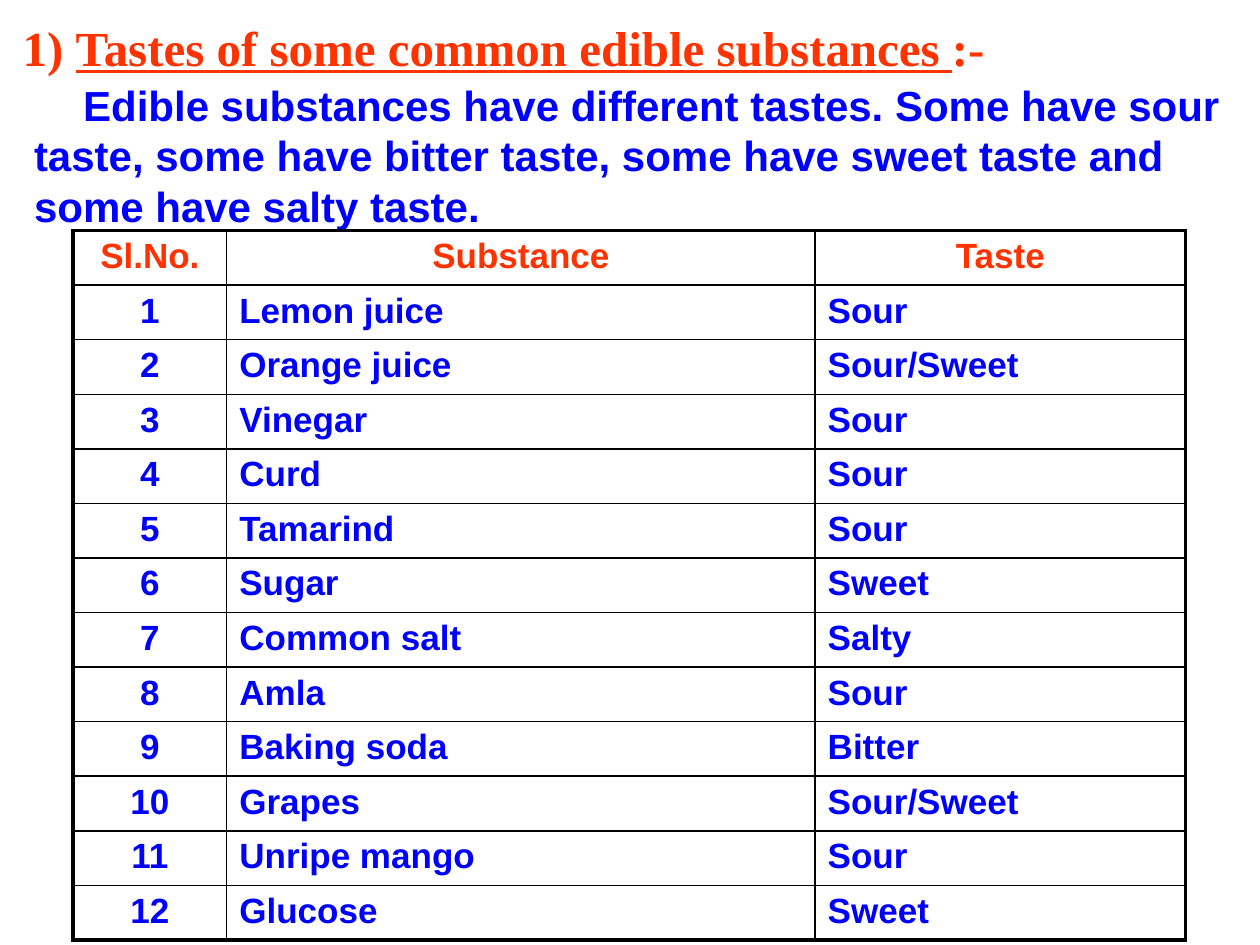
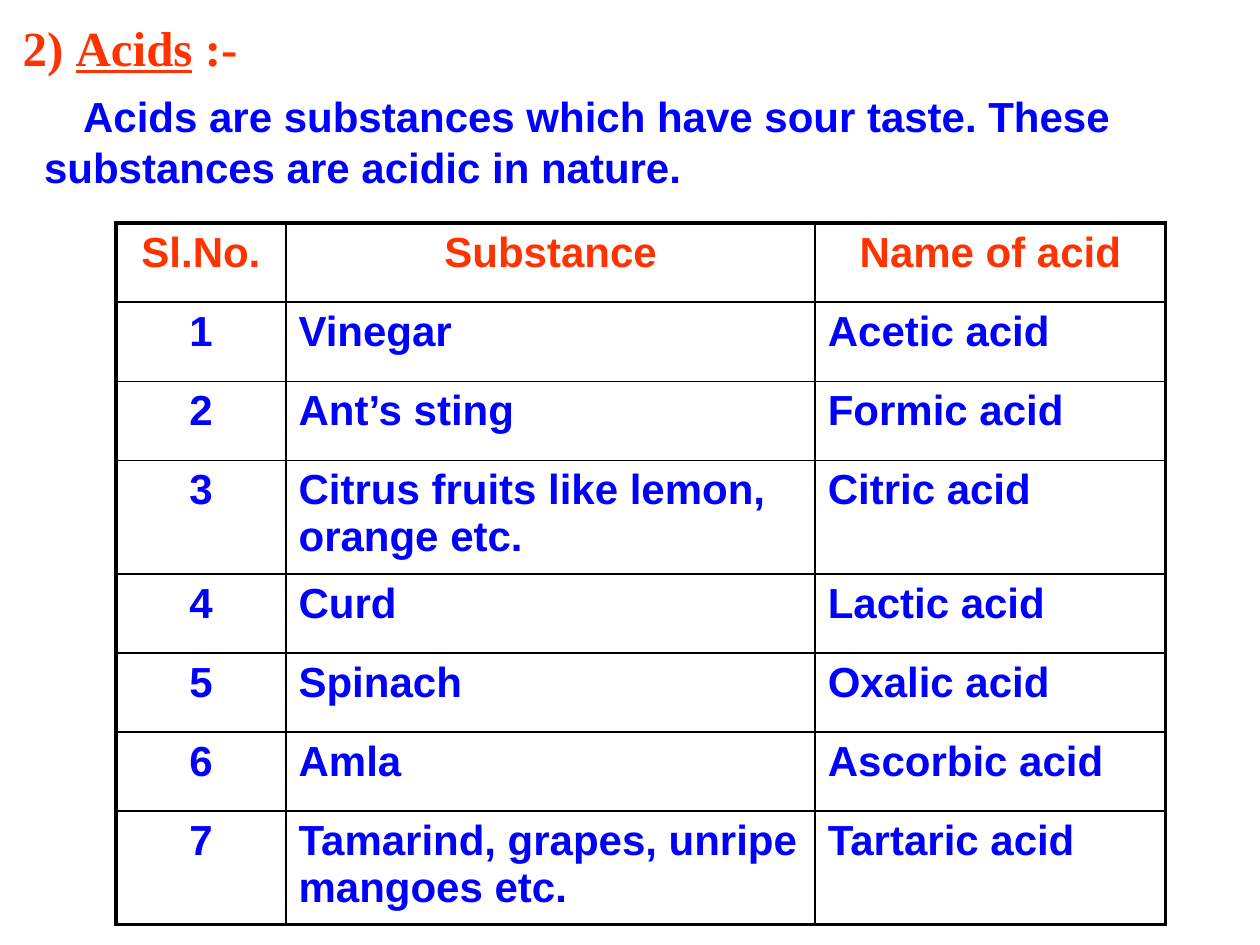
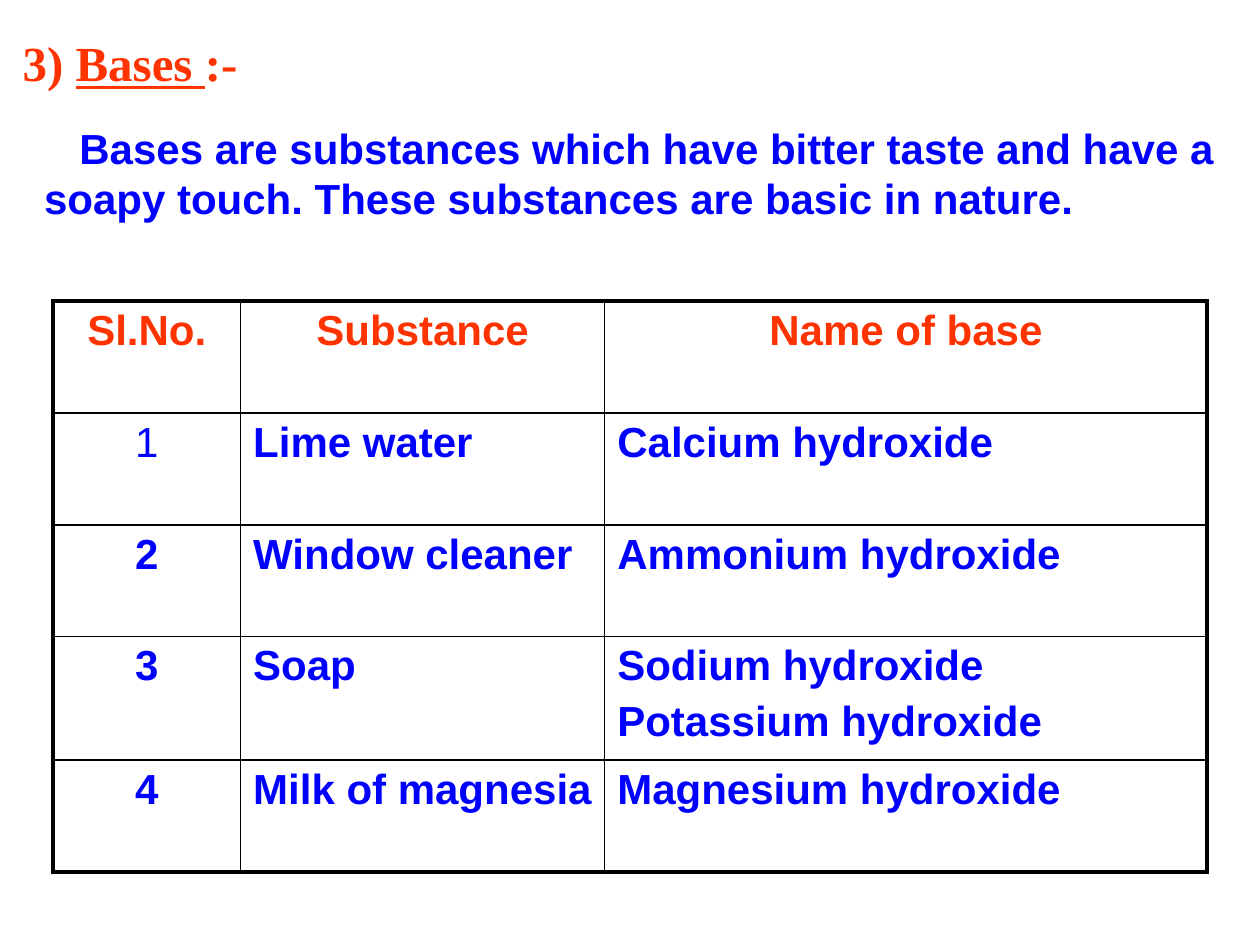
from dataclasses import dataclass

from pptx import Presentation
from pptx.dml.color import RGBColor as Rgb
from pptx.enum.text import MSO_ANCHOR as Anchor, MSO_AUTO_SIZE as Fit, PP_ALIGN as Align
from pptx.oxml.ns import qn
from pptx.util import Inches, Pt
from lxml.etree import SubElement


@dataclass(frozen=True)
class Theme:
    head: str = "FF3300"
    text: str = "0000FF"
    rule: str = "000000"
    serif: str = "Times New Roman"
    sans: str = "Arial"
    title: int = 28
    body: int = 24
    thick: float = 2.25
    thin: float = 1


THEME = Theme()

# Content: title parts are (number, underlined words, ending); boxes are left, top, width, height
TOPICS = [
    {
        "title": ("1) ", "Tastes of some common edible substances ", ":-"),
        "title_box": (0.08, 0.08, 9.67, 0.58),
        "body": "Edible substances have different tastes. Some have sour taste, some have "
                "bitter taste, some have sweet taste and some have salty taste.",
        "body_box": (0.17, 0.58, 9.75, 6.42),
        "indent": 0.39,
        "heads": ("Sl.No.", "Substance", "Taste"),
        "rows": [
            ("Lemon juice", "Sour"), ("Orange juice", "Sour/Sweet"),
            ("Vinegar", "Sour"), ("Curd", "Sour"), ("Tamarind", "Sour"),
            ("Sugar", "Sweet"), ("Common salt", "Salty"), ("Amla", "Sour"),
            ("Baking soda", "Bitter"), ("Grapes", "Sour/Sweet"),
            ("Unripe mango", "Sour"), ("Glucose", "Sweet"),
        ],
        "grid_box": (0.58, 1.83, 8.83, 5.63),
        "cols": (1.22, 4.67, 2.94),
        "size": 20,
    },
    {
        "title": ("2) ", "Acids", " :-"),
        "title_box": (0.08, 0.08, 8.5, 0.58),
        "body": "Acids are substances which have sour taste. These substances are acidic "
                "in nature.",
        "body_box": (0.25, 0.67, 9.58, 6.58),
        "indent": 0.31,
        "heads": ("Sl.No.", "Substance", "Name of acid"),
        "rows": [
            ("Vinegar", "Acetic acid"), ("Ant’s sting", "Formic acid"),
            ("Citrus fruits like lemon, orange etc.", "Citric acid"),
            ("Curd", "Lactic acid"), ("Spinach", "Oxalic acid"),
            ("Amla", "Ascorbic acid"),
            ("Tamarind, grapes, unripe mangoes etc.", "Tartaric acid"),
        ],
        "grid_box": (0.92, 1.77, 8.33, 5.57),
        "cols": (1.35, 4.2, 2.78),
        "size": 24,
        "tall": {3: 0.9, 7: 0.9},
    },
    {
        "title": ("3) ", "Bases ", ":-"),
        "title_box": (0.08, 0.08, 8.5, 0.83),
        "body": "Bases are substances which have bitter taste and have a soapy touch. "
                "These substances are basic in nature.",
        "body_box": (0.25, 0.92, 9.5, 6.33),
        "indent": 0.28,
        "heads": ("Sl.No.", "Substance", "Name of base"),
        "rows": [
            ("Lime water", "Calcium hydroxide"),
            ("Window cleaner", "Ammonium hydroxide"),
            ("Soap", "Sodium hydroxide\nPotassium hydroxide"),
            ("Milk of magnesia", "Magnesium hydroxide"),
        ],
        "grid_box": (0.42, 2.39, 9.17, 4.53),
        "cols": (1.49, 2.89, 4.78),
        "size": 24,
        "tall": {3: 0.98},
        "plain": {(1, 0)},
    },
]


def place(shape, box):
    shape.left, shape.top, shape.width, shape.height = map(Inches, box)


def style(run, size, color, face, bold=True):
    font = run.font
    font.size, font.name, font.bold = Pt(size), face, bold
    font.color.rgb = Rgb.from_string(color)


# Title and lead text
def add_title(slide, topic):
    shape = slide.shapes.title
    place(shape, topic["title_box"])
    frame = shape.text_frame
    frame.auto_size, frame.vertical_anchor = Fit.NONE, Anchor.MIDDLE
    para = frame.paragraphs[0]
    para.alignment = Align.LEFT
    for pos, part in enumerate(topic["title"]):
        run = para.add_run()
        run.text = part
        style(run, THEME.title, THEME.head, THEME.serif)
        run.font.underline = pos == 1


def add_body(slide, topic):
    shape = slide.placeholders[1]
    place(shape, topic["body_box"])
    frame = shape.text_frame
    frame.text = topic["body"]
    frame.auto_size, frame.vertical_anchor = Fit.NONE, Anchor.TOP
    para = frame.paragraphs[0]
    para.alignment, para.line_spacing = Align.LEFT, 1.0
    para.space_before = Pt(THEME.body * 0.2)
    para._p.get_or_add_pPr().set("indent", str(Inches(topic["indent"])))
    style(para.runs[0], THEME.body, THEME.text, THEME.sans)


# Table
def add_edges(cell, outer):
    props = cell._tc.get_or_add_tcPr()
    for side in "LRTB":
        width = THEME.thick if outer[side] else THEME.thin
        line = SubElement(props, qn(f"a:ln{side}"), w=str(Pt(width)))
        fill = SubElement(line, qn("a:solidFill"))
        SubElement(fill, qn("a:srgbClr"), val=THEME.rule)


def fill_cell(cell, text, size, color, center, bold):
    cell.fill.background()
    cell.text_frame.text = text
    for para in cell.text_frame.paragraphs:
        para.alignment = Align.CENTER if center else Align.LEFT
        para.space_before = Pt(size * 0.2)
        style(para.runs[0], size, color, THEME.sans, bold)


def add_grid(slide, topic):
    rows = [topic["heads"]]
    rows += [(str(num), *row) for num, row in enumerate(topic["rows"], 1)]
    cols, box = topic["cols"], topic["grid_box"]
    table = slide.shapes.add_table(len(rows), len(cols), *map(Inches, box)).table
    table.first_row = table.horz_banding = False
    for col, width in zip(table.columns, cols):
        col.width = Inches(width)

    # Rows share the height left over by the tall ones
    tall = topic.get("tall", {})
    even = (box[3] - sum(tall.values())) / (len(rows) - len(tall))
    last, end = len(rows) - 1, len(cols) - 1
    for r, row in enumerate(rows):
        table.rows[r].height = Inches(tall.get(r, even))
        for c, text in enumerate(row):
            cell = table.cell(r, c)
            add_edges(cell, {"L": c == 0, "R": c == end, "T": r == 0, "B": r == last})
            fill_cell(cell, text, topic["size"], THEME.text if r else THEME.head,
                      r == 0 or c == 0, (r, c) not in topic.get("plain", ()))


def main():
    deck = Presentation()
    deck.slide_width, deck.slide_height = Inches(10), Inches(7.5)
    for topic in TOPICS:
        slide = deck.slides.add_slide(deck.slide_layouts[0])
        add_title(slide, topic)
        add_body(slide, topic)
        add_grid(slide, topic)
    deck.save("out.pptx")


if __name__ == "__main__":
    main()
